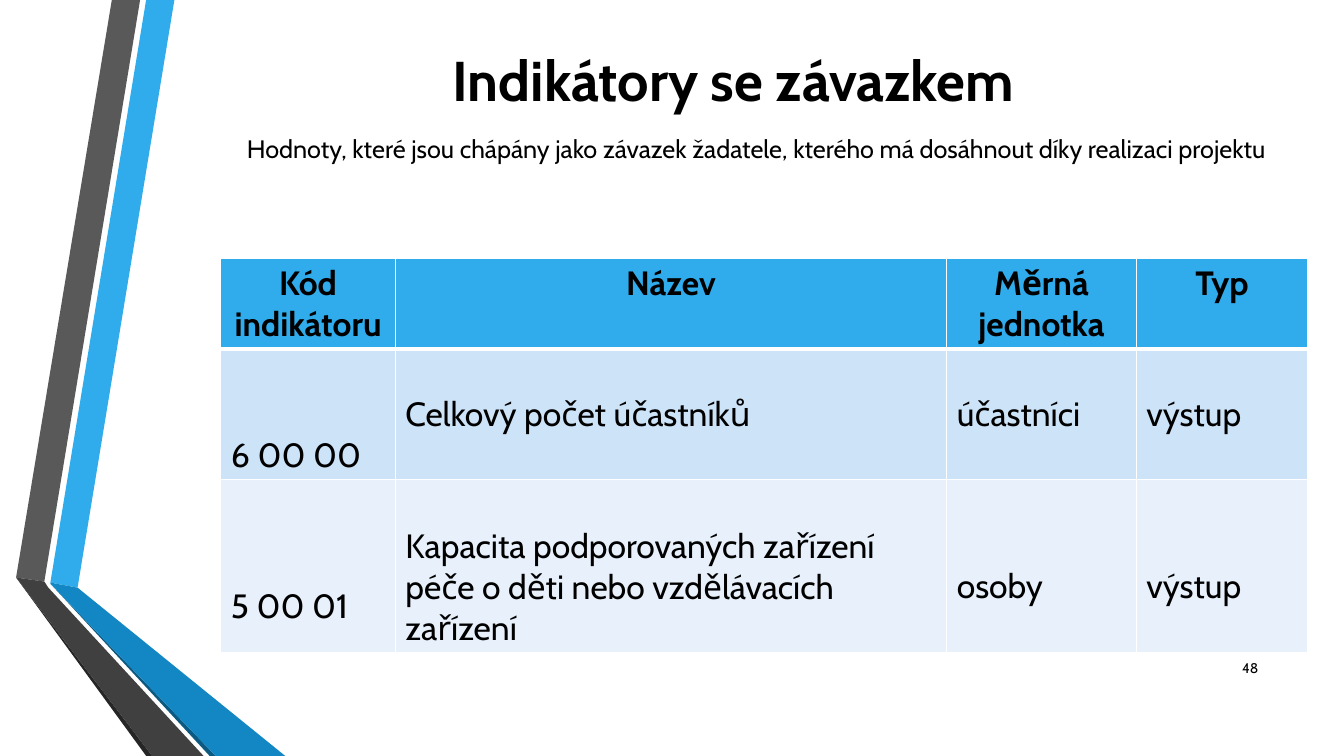
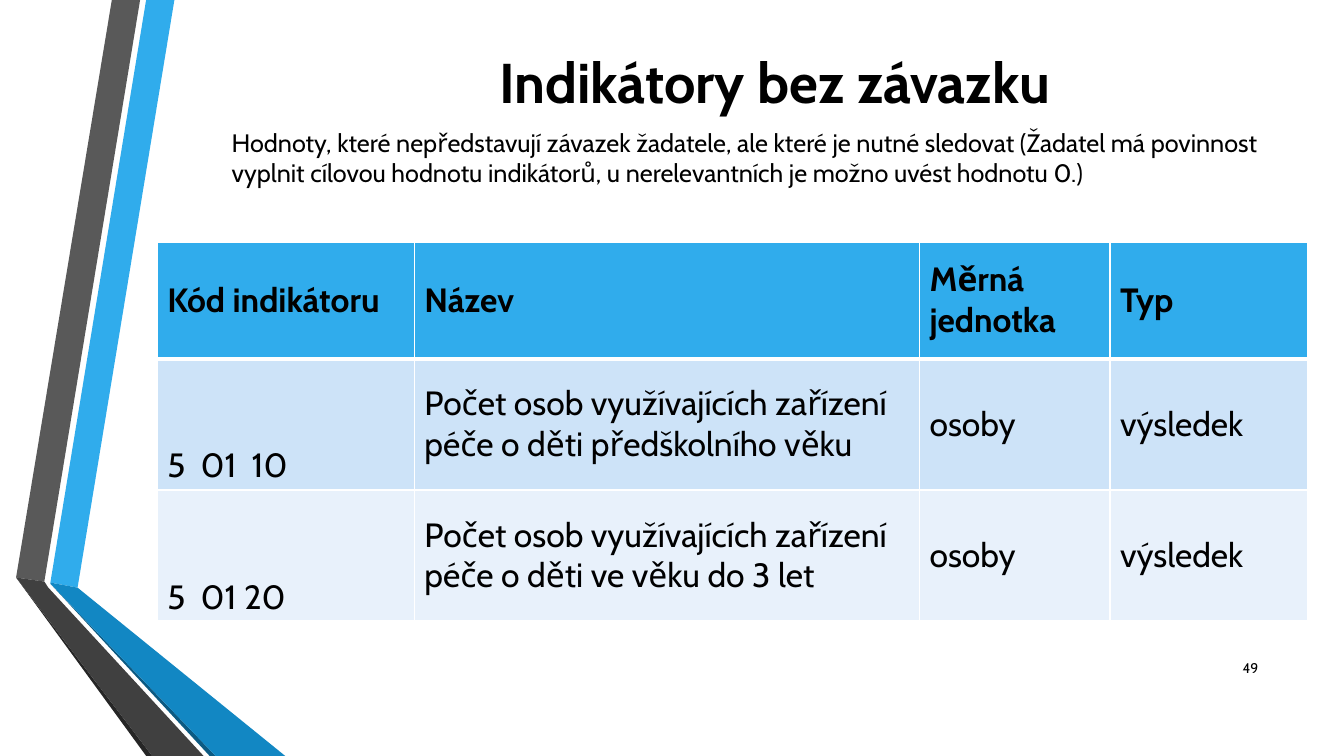
from dataclasses import dataclass

from lxml.etree import SubElement
from pptx import Presentation
from pptx.dml.color import RGBColor
from pptx.enum.text import MSO_ANCHOR as Anchor, PP_ALIGN as Align
from pptx.oxml.ns import qn
from pptx.slide import Slide
from pptx.table import _Cell as Cell
from pptx.text.text import TextFrame
from pptx.util import Inches, Pt


@dataclass(frozen=True)
class Theme:
    font: str = "Cabin"
    ink: str = "000000"
    rule: str = "FFFFFF"
    header: str = "30ACEC"
    rows: tuple[str, ...] = ("CDE3F8", "E8F1FB")
    title_size: int = 40
    intro_size: int = 18
    table_size: int = 24
    number_size: int = 10
    thin_rule: int = 1
    thick_rule: int = 3


@dataclass(frozen=True)
class Box:
    left: float
    top: float
    width: float
    height: float

    def lengths(self) -> tuple[Inches, ...]:
        return tuple(Inches(n) for n in (self.left, self.top, self.width, self.height))


@dataclass(frozen=True)
class Band:
    color: str
    points: tuple[tuple[float, float], ...]


@dataclass(frozen=True)
class Style:
    size: int
    bold: bool = False
    align: Align = Align.LEFT
    spacing: float = 1.0


@dataclass(frozen=True)
class Indicator:
    code: str
    name: str
    unit: str
    kind: str
    lowered: bool = False


@dataclass(frozen=True)
class IndicatorPage:
    title: str
    title_box: Box
    intro: str
    intro_box: Box
    grid_left: float
    grid_top: float
    columns: tuple[float, ...]
    rows: tuple[float, ...]
    header_align: Align
    header_anchor: Anchor
    indicators: tuple[Indicator, ...]
    number: int


THEME = Theme()
HEADINGS = ("Kód indikátoru", "Název", "Měrná jednotka", "Typ")
NUMBER_BOX = Box(11.98, 6.43, 0.6, 0.4)
CODE_SPACING = 3.0
LOWERED_MARGIN = 0.46

BANDS = (
    Band("30ACEC", ((0.5, 5.78), (0.77, 5.83), (1.73, 0), (1.45, 0))),
    Band("595959", ((1.39, 0), (1.11, 0), (0.16, 5.73), (0.44, 5.77))),
    Band("262626", ((0.16, 5.73), (1.45, 7.5), (1.51, 7.5))),
    Band("0C5A82", ((0.5, 5.79), (2.08, 7.5), (2.14, 7.5))),
    Band("1287C3", ((0.5, 5.79), (2.14, 7.5), (2.83, 7.5), (0.77, 5.83), (0.5, 5.78))),
    Band("404040", ((2.02, 7.5), (0.48, 5.83), (0.44, 5.77), (0.16, 5.73), (1.51, 7.5))),
)

PAGES = (
    IndicatorPage(
        title="Indikátory se závazkem",
        title_box=Box(3.27, 0.4, 8.01, 0.77),
        intro="Hodnoty, které jsou chápány jako závazek žadatele, "
        "kterého má dosáhnout díky realizaci projektu",
        intro_box=Box(2.35, 1.27, 10.38, 0.4),
        grid_left=2.19,
        grid_top=2.56,
        columns=(1.73, 5.47, 1.88, 1.7),
        rows=(0.89, 1.3, 1.7),
        header_align=Align.CENTER,
        header_anchor=Anchor.TOP,
        indicators=(
            Indicator("6 00 00", "Celkový počet účastníků", "účastníci", "výstup"),
            Indicator(
                "5 00 01",
                "Kapacita podporovaných zařízení péče o děti nebo vzdělávacích zařízení",
                "osoby",
                "výstup",
                lowered=True,
            ),
        ),
        number=48,
    ),
    IndicatorPage(
        title="Indikátory bez závazku",
        title_box=Box(3.33, 0.42, 8.71, 0.77),
        intro="Hodnoty, které nepředstavují závazek žadatele, ale které je nutné sledovat "
        "(Žadatel má povinnost vyplnit cílovou hodnotu indikátorů, "
        "u nerelevantních je možno uvést hodnotu 0.)",
        intro_box=Box(2.2, 1.21, 10.74, 0.71),
        grid_left=1.56,
        grid_top=2.4,
        columns=(2.55, 5.01, 1.89, 1.96),
        rows=(1.16, 1.3, 1.3),
        header_align=Align.LEFT,
        header_anchor=Anchor.MIDDLE,
        indicators=(
            Indicator(
                "5  01  10",
                "Počet osob využívajících zařízení péče o děti předškolního věku",
                "osoby",
                "výsledek",
            ),
            Indicator(
                "5  01 20",
                "Počet osob využívajících zařízení péče o děti ve věku do 3 let",
                "osoby",
                "výsledek",
            ),
        ),
        number=49,
    ),
)


def rgb(color: str) -> RGBColor:
    return RGBColor.from_string(color)


def write(frame: TextFrame, text: str, style: Style) -> None:
    paragraph = frame.paragraphs[0]
    paragraph.alignment = style.align
    paragraph.line_spacing = style.spacing
    run = paragraph.add_run()
    run.text = text
    run.font.name = THEME.font
    run.font.size = Pt(style.size)
    run.font.bold = style.bold
    run.font.color.rgb = rgb(THEME.ink)


def add_text(
    slide: Slide, box: Box, text: str, style: Style, anchor: Anchor = Anchor.TOP
) -> None:
    frame = slide.shapes.add_textbox(*box.lengths()).text_frame
    frame.word_wrap = True
    frame.vertical_anchor = anchor
    write(frame, text, style)


def add_band(slide: Slide, band: Band) -> None:
    start, *rest = [(Inches(x), Inches(y)) for x, y in band.points]
    outline = slide.shapes.build_freeform(*start)
    outline.add_line_segments(rest, close=True)
    ribbon = outline.convert_to_shape()
    ribbon.shadow.inherit = False
    ribbon.fill.solid()
    ribbon.fill.fore_color.rgb = rgb(band.color)
    ribbon.line.fill.background()


def paint_cell(cell: Cell, color: str, top: int, bottom: int) -> None:
    properties = cell._tc.get_or_add_tcPr()
    widths = {"L": THEME.thin_rule, "R": THEME.thin_rule, "T": top, "B": bottom}
    for side, width in widths.items():
        edge = SubElement(properties, qn(f"a:ln{side}"), w=str(Pt(width)))
        fill = SubElement(edge, qn("a:solidFill"))
        SubElement(fill, qn("a:srgbClr"), val=THEME.rule)
    cell.fill.solid()
    cell.fill.fore_color.rgb = rgb(color)


def add_indicators(slide: Slide, page: IndicatorPage) -> None:
    area = Box(page.grid_left, page.grid_top, sum(page.columns), sum(page.rows))
    grid = slide.shapes.add_table(
        len(page.rows), len(page.columns), *area.lengths()
    ).table
    grid.horz_banding = False
    for column, width in zip(grid.columns, page.columns):
        column.width = Inches(width)
    for row, height in zip(grid.rows, page.rows):
        row.height = Inches(height)

    heading_style = Style(THEME.table_size, bold=True, align=page.header_align)
    for index, heading in enumerate(HEADINGS):
        cell = grid.cell(0, index)
        paint_cell(cell, THEME.header, THEME.thin_rule, THEME.thick_rule)
        cell.vertical_anchor = page.header_anchor
        write(cell.text_frame, heading, heading_style)

    code_style = Style(THEME.table_size, spacing=CODE_SPACING)
    detail_style = Style(THEME.table_size)
    for row_index, (indicator, color) in enumerate(zip(page.indicators, THEME.rows), 1):
        top = THEME.thick_rule if row_index == 1 else THEME.thin_rule
        values = (indicator.code, indicator.name, indicator.unit, indicator.kind)
        for index, value in enumerate(values):
            cell = grid.cell(row_index, index)
            paint_cell(cell, color, top, THEME.thin_rule)
            cell.vertical_anchor = Anchor.MIDDLE
            if indicator.lowered and index > 0:
                cell.margin_top = Inches(LOWERED_MARGIN)
            write(cell.text_frame, value, detail_style if index else code_style)


def add_page(slide: Slide, page: IndicatorPage) -> None:
    for band in BANDS:
        add_band(slide, band)
    title_style = Style(THEME.title_size, bold=True, align=Align.CENTER)
    add_text(slide, page.title_box, page.title, title_style)
    add_text(slide, page.intro_box, page.intro, Style(THEME.intro_size))
    add_indicators(slide, page)
    number_style = Style(THEME.number_size, align=Align.RIGHT)
    add_text(slide, NUMBER_BOX, str(page.number), number_style, Anchor.MIDDLE)


def main() -> None:
    deck = Presentation()
    deck.slide_width = Inches(13.33)
    deck.slide_height = Inches(7.5)
    blank = deck.slide_layouts[6]
    for page in PAGES:
        add_page(deck.slides.add_slide(blank), page)
    deck.save("out.pptx")


if __name__ == "__main__":
    main()
